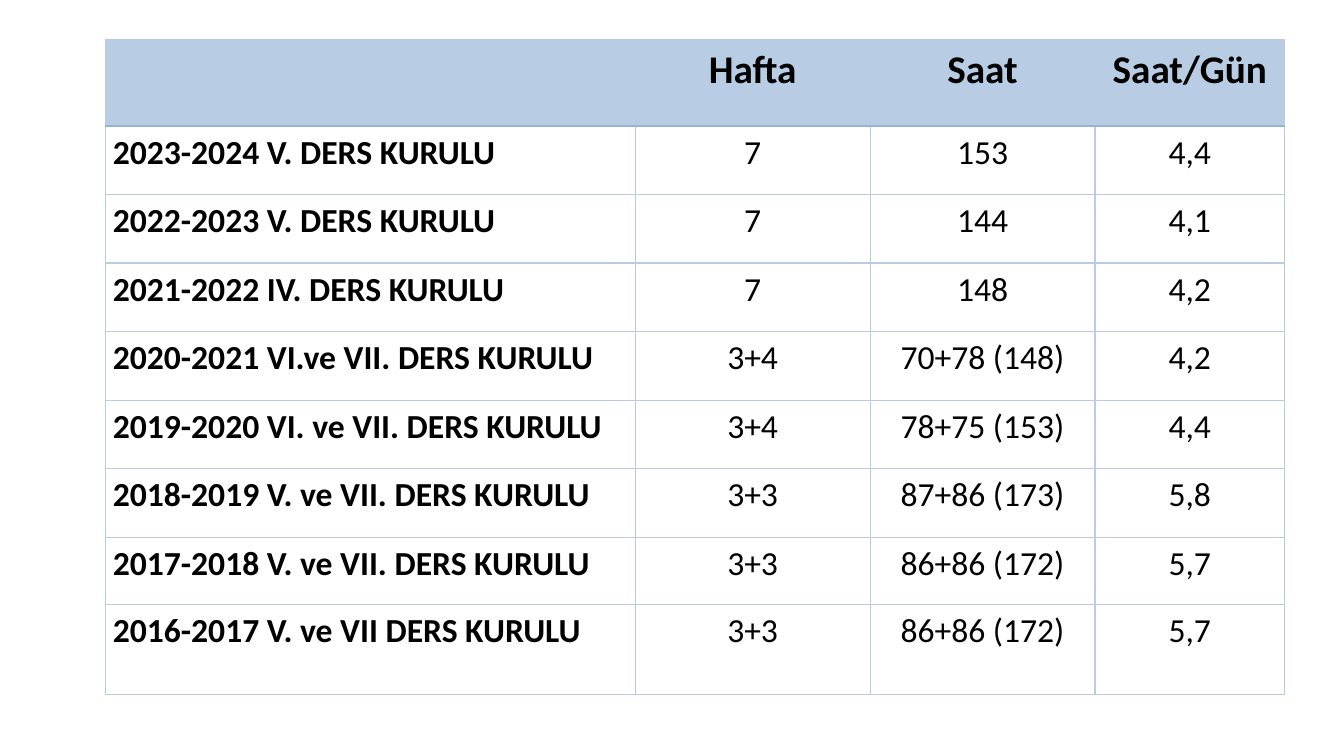
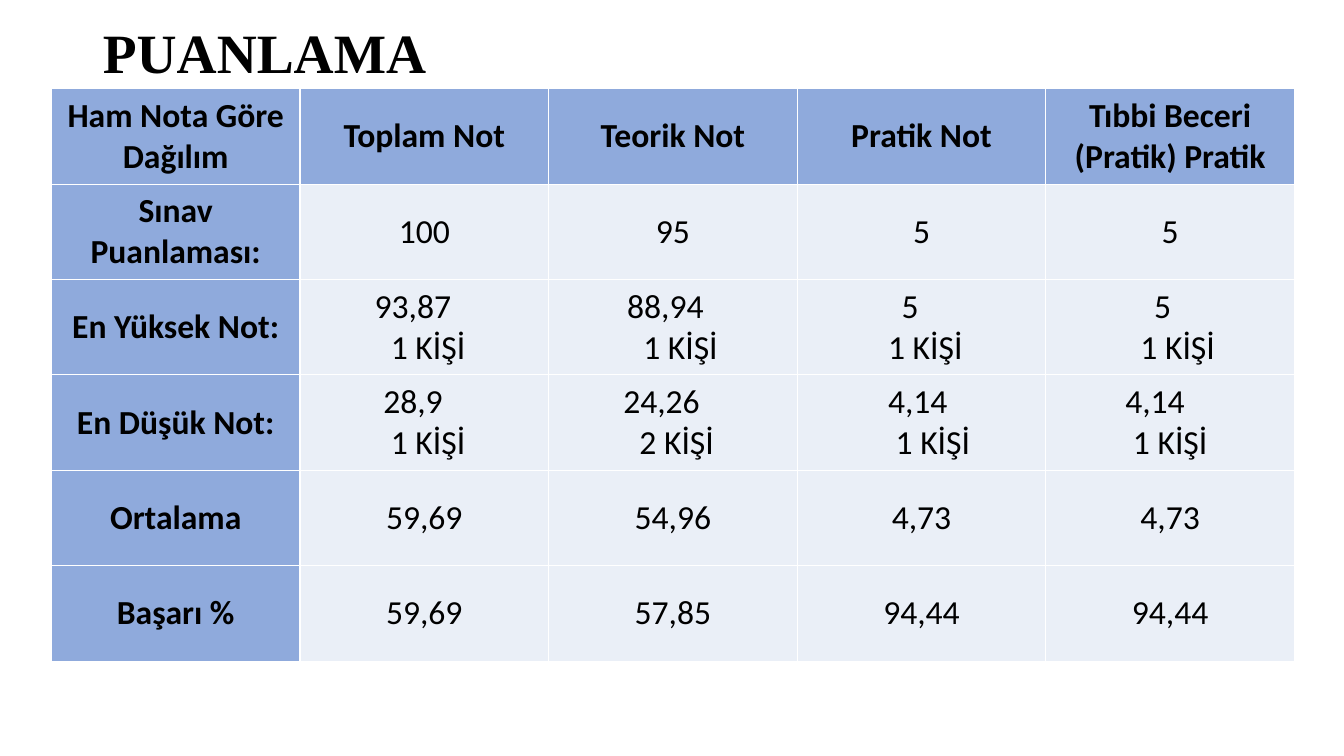
"""Two slides: a table of course boards by year and a table of exam scores."""
from lxml import etree
from pptx import Presentation
from pptx import util as u
from pptx.dml.color import RGBColor
from pptx.enum import text as t
from pptx.oxml.ns import qn

BOARDS = [
    ("", "Hafta", "Saat", "Saat/Gün"),
    ("2023-2024 V. DERS KURULU", "7", "153", "4,4"),
    ("2022-2023 V. DERS KURULU", "7", "144", "4,1"),
    ("2021-2022 IV. DERS KURULU", "7", "148", "4,2"),
    ("2020-2021 VI.ve VII. DERS KURULU", "3+4", "70+78 (148)", "4,2"),
    ("2019-2020 VI. ve VII. DERS KURULU", "3+4", "78+75 (153)", "4,4"),
    ("2018-2019 V. ve VII. DERS KURULU", "3+3", "87+86 (173)", "5,8"),
    ("2017-2018 V. ve VII. DERS KURULU", "3+3", "86+86 (172)", "5,7"),
    ("2016-2017 V. ve VII DERS KURULU", "3+3", "86+86 (172)", "5,7"),
]
TITLE = "PUANLAMA"
SCORES = [
    ("Ham Nota Göre Dağılım", "Toplam Not", "Teorik Not", "Pratik Not",
     "Tıbbi Beceri (Pratik) Pratik"),
    ("Sınav Puanlaması:", "100", "95", "5", "5"),
    ("En Yüksek Not:", "93,87\n1 KİŞİ", "88,94\n1 KİŞİ", "5\n1 KİŞİ", "5\n1 KİŞİ"),
    ("En Düşük Not:", "28,9\n1 KİŞİ", "24,26\n2 KİŞİ", "4,14\n1 KİŞİ", "4,14\n1 KİŞİ"),
    ("Ortalama", "59,69", "54,96", "4,73", "4,73"),
    ("Başarı %", "59,69", "57,85", "94,44", "94,44"),
]
SHIFTS = {2: (3, 2, 3, 2), 3: (3, 3, 1, 4)}
STEP, STEPS = 0.075, 4

BLACK = RGBColor(0, 0, 0)
WHITE = RGBColor(255, 255, 255)
SKY = RGBColor(0xB8, 0xCC, 0xE4)
STEEL = RGBColor(0x95, 0xB3, 0xD7)
BLUE = RGBColor(0x8F, 0xAA, 0xDC)
PALE = RGBColor(0xEA, 0xEF, 0xF7)
WIDE, HIGH = 13.33, 7.5
MID, LEFT = t.PP_ALIGN.CENTER, t.PP_ALIGN.LEFT


def write(frame, words, size=24, bold=False, font="Calibri", align=MID, space=1.0, indent=0):
    """Fill a text frame; indent applies to every line after the first."""
    frame.text = words
    for num, para in enumerate(frame.paragraphs):
        para.alignment, para.line_spacing = align, space
        if num:
            para._p.get_or_add_pPr().set("marL", str(u.Inches(indent)))
        for run in para.runs:
            face = run.font
            face.size, face.bold, face.name = u.Pt(size), bold, font
            face.color.rgb = BLACK


def edge(cell, **sides):
    """Draw cell borders, each side given as (colour, points)."""
    props = cell._tc.get_or_add_tcPr()
    for pos, side in enumerate("LRTB"):
        tint, width = sides[side]
        line = etree.Element(qn("a:ln" + side), w=str(u.Pt(width)))
        fill = etree.SubElement(line, qn("a:solidFill"))
        etree.SubElement(fill, qn("a:srgbClr"), val=str(tint))
        props.insert(pos, line)


def grid(slide, rows, left, top, widths, heights):
    """Add a plain table and return it."""
    box = (left, top, sum(widths), sum(heights))
    table = slide.shapes.add_table(len(rows), len(widths), *map(u.Inches, box)).table
    table.first_row = table.horz_banding = False
    for col, width in zip(table.columns, widths):
        col.width = u.Inches(width)
    for row, height in zip(table.rows, heights):
        row.height = u.Inches(height)
    return table


def style(cell, fill, side=0, right=0, anchor=t.MSO_ANCHOR.TOP):
    """Set cell fill, margins and anchor."""
    if fill is None:
        cell.fill.background()
    else:
        cell.fill.solid()
        cell.fill.fore_color.rgb = fill
    cell.margin_left, cell.margin_right = u.Inches(side), u.Inches(side + right)
    cell.margin_top = cell.margin_bottom = 0
    cell.vertical_anchor = anchor


def boards(deck):
    """Build the slide of boards by year."""
    slide = deck.slides.add_slide(deck.slide_layouts[6])
    table = grid(slide, BOARDS, 1.05, 0.39, (5.25, 2.33, 2.23, 1.88),
                 [0.86] + [0.68] * 6 + [0.67, 0.89])
    thin, thick = (SKY, 1), (STEEL, 1.5)
    for r, row in enumerate(BOARDS):
        for c, words in enumerate(row):
            cell, head = table.cell(r, c), r == 0
            style(cell, SKY if head else None, side=0.07)
            edge(cell, L=thin, R=thin, T=thick if r == 1 else thin, B=thick if head else thin)
            write(cell.text_frame, words, size=28 if head else 24, bold=head or c == 0,
                  align=MID if head or c else LEFT, space=1.15)


def scores(deck):
    """Build the slide of exam scores."""
    slide = deck.slides.add_slide(deck.slide_layouts[5])
    title = slide.shapes.title
    title.left, title.top, title.width, title.height = map(u.Inches, (0.92, 0.4, 11.5, 0.3))
    write(title.text_frame, TITLE, size=39.6, bold=True, font="Times New Roman",
          align=LEFT, space=0.9)
    title.text_frame.vertical_anchor = t.MSO_ANCHOR.MIDDLE
    title.text_frame.auto_size = t.MSO_AUTO_SIZE.NONE
    cols, rows = len(SCORES[0]), len(SCORES)
    table = grid(slide, SCORES, 0.51, 0.88, [12.33 / cols] * cols, [5.68 / rows] * rows)
    for r, row in enumerate(SCORES):
        for c, words in enumerate(row):
            cell, head = table.cell(r, c), r == 0 or c == 0
            shift = SHIFTS[r][c - 1] if c and r in SHIFTS else 0
            style(cell, BLUE if head else PALE, right=shift * STEP, anchor=t.MSO_ANCHOR.MIDDLE)
            edge(cell, **dict.fromkeys("LRTB", (WHITE, 1)))
            write(cell.text_frame, words, bold=head, indent=STEP * STEPS)


deck = Presentation()
deck.slide_width, deck.slide_height = u.Inches(WIDE), u.Inches(HIGH)
boards(deck)
scores(deck)
deck.save("out.pptx")
